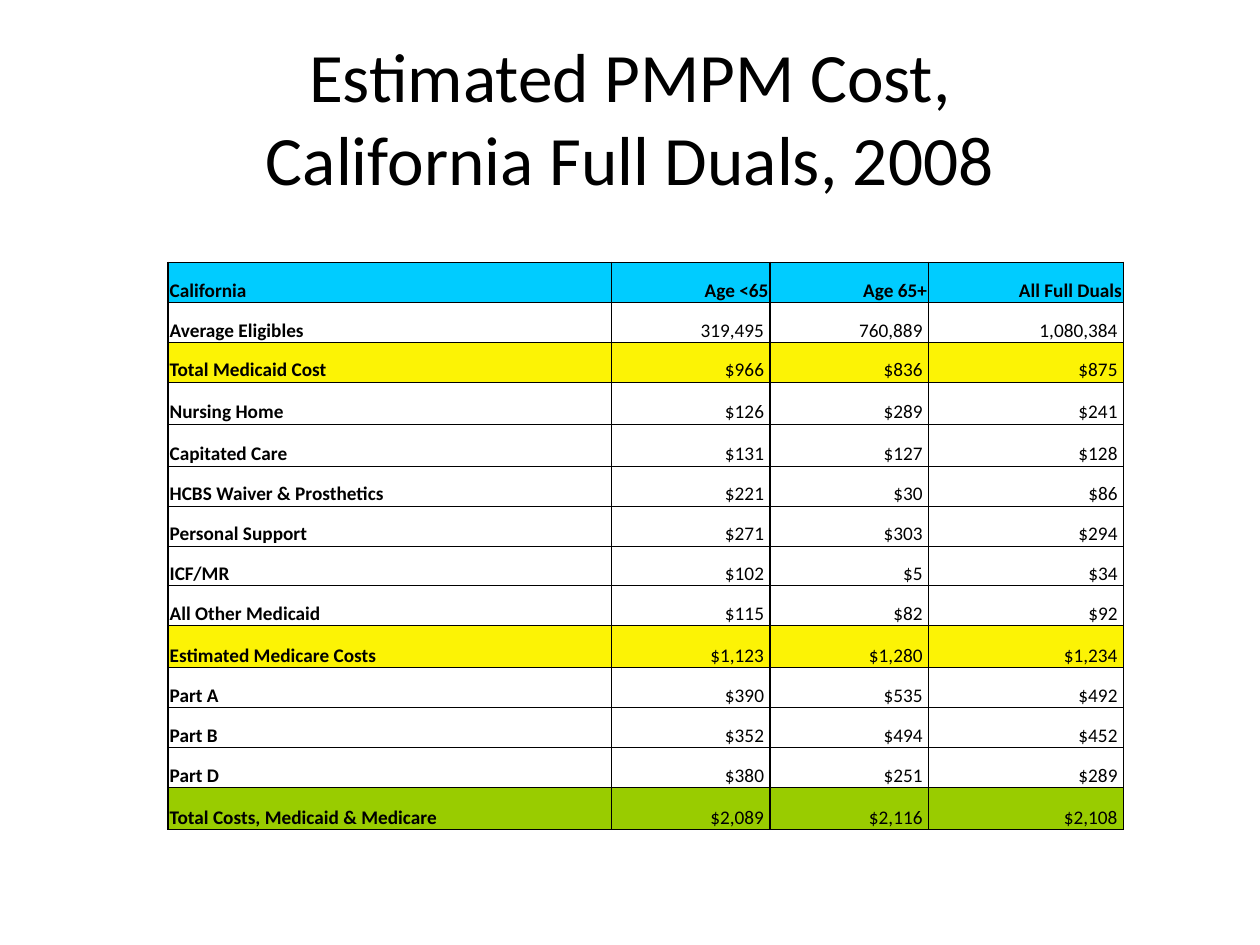
from lxml import etree
from pptx import Presentation
from pptx.dml.color import RGBColor
from pptx.enum.text import MSO_ANCHOR, PP_ALIGN
from pptx.oxml.ns import qn
from pptx.util import Cm, Pt

LEFT, CENTER, RIGHT = PP_ALIGN.LEFT, PP_ALIGN.CENTER, PP_ALIGN.RIGHT
MIDDLE, BOTTOM = MSO_ANCHOR.MIDDLE, MSO_ANCHOR.BOTTOM

BLACK = RGBColor(0x00, 0x00, 0x00)
WHITE = RGBColor(0xFF, 0xFF, 0xFF)
SKY = RGBColor(0x00, 0xCC, 0xFF)
YELLOW = RGBColor(0xFC, 0xF3, 0x05)
GREEN = RGBColor(0x99, 0xCC, 0x00)

FONT = "Calibri"
TITLE_LINES = ["Estimated PMPM Cost,", "California Full Duals, 2008"]
COSTS = [
    ("California", "Age <65", "Age 65+", "All Full Duals"),
    ("Average Eligibles", "319,495", "760,889", "1,080,384"),
    ("Total Medicaid Cost", "$966", "$836", "$875"),
    ("Nursing Home", "$126", "$289", "$241"),
    ("Capitated Care", "$131", "$127", "$128"),
    ("HCBS Waiver & Prosthetics", "$221", "$30", "$86"),
    ("Personal Support", "$271", "$303", "$294"),
    ("ICF/MR", "$102", "$5", "$34"),
    ("All Other Medicaid", "$115", "$82", "$92"),
    ("Estimated Medicare Costs", "$1,123", "$1,280", "$1,234"),
    ("Part A", "$390", "$535", "$492"),
    ("Part B", "$352", "$494", "$452"),
    ("Part D", "$380", "$251", "$289"),
    ("Total Costs, Medicaid & Medicare", "$2,089", "$2,116", "$2,108"),
]
ROW_FILLS = {0: SKY, 2: YELLOW, 9: YELLOW, 13: GREEN}
TALL_ROWS = {3, 4, 9, 13}
COLUMN_SHARES = [0.464, 0.166, 0.166, 0.204]


def style_font(font, size, bold=False):
    font.name = FONT
    font.size = Pt(size)
    font.bold = bold
    font.color.rgb = BLACK


def add_title(slide, left, top, width, height):
    title = slide.shapes.add_textbox(left, top, width, height).text_frame
    title.word_wrap = True
    title.vertical_anchor = MIDDLE
    title.text = "\v".join(TITLE_LINES)
    heading = title.paragraphs[0]
    heading.alignment = CENTER
    style_font(heading.font, 39.6)


def draw_borders(cell, widths):
    properties = cell._tc.get_or_add_tcPr()
    for side, width in widths.items():
        line = etree.SubElement(properties, qn(f"a:ln{side}"), w=str(Pt(width)))
        fill = etree.SubElement(line, qn("a:solidFill"))
        etree.SubElement(fill, qn("a:srgbClr"), val=str(BLACK))


def fill_cell(cell, text, row, column):
    is_header, is_label = row == 0, column == 0
    draw_borders(cell, {
        "L": 1,
        "R": 1,
        "T": 1 if is_header else 0.5,
        "B": 1 if row == len(COSTS) - 1 else 0.5,
    })
    cell.fill.solid()
    cell.fill.fore_color.rgb = ROW_FILLS.get(row, WHITE)
    cell.vertical_anchor = BOTTOM
    cell.margin_left = cell.margin_top = Cm(0.03)
    cell.margin_right = Cm(0.03 if is_header or is_label else 0.12)
    cell.margin_bottom = 0
    cell.text = text
    entry = cell.text_frame.paragraphs[0]
    entry.alignment = LEFT if is_label else RIGHT
    style_font(entry.font, 11, is_header or is_label)


def add_cost_table(slide, left, top, width, height):
    costs = slide.shapes.add_table(
        len(COSTS), len(COLUMN_SHARES), left, top, width, height
    ).table
    costs.first_row = costs.horz_banding = False
    for column, share in zip(costs.columns, COLUMN_SHARES):
        column.width = int(width * share)
    tall_extra = Cm(0.04)
    base_height = (height - len(TALL_ROWS) * tall_extra) // len(COSTS)
    for row, values in enumerate(COSTS):
        costs.rows[row].height = base_height + (tall_extra if row in TALL_ROWS else 0)
        for column, text in enumerate(values):
            fill_cell(costs.cell(row, column), text, row, column)


def main():
    deck = Presentation()
    deck.slide_width, deck.slide_height = Cm(25.4), Cm(19.05)
    slide = deck.slides.add_slide(deck.slide_layouts[6])
    add_title(slide, Cm(1.27), Cm(0.76), Cm(22.86), Cm(3.18))
    add_cost_table(slide, Cm(3.39), Cm(5.29), Cm(19.26), Cm(11.43))
    deck.save("out.pptx")


if __name__ == "__main__":
    main()
